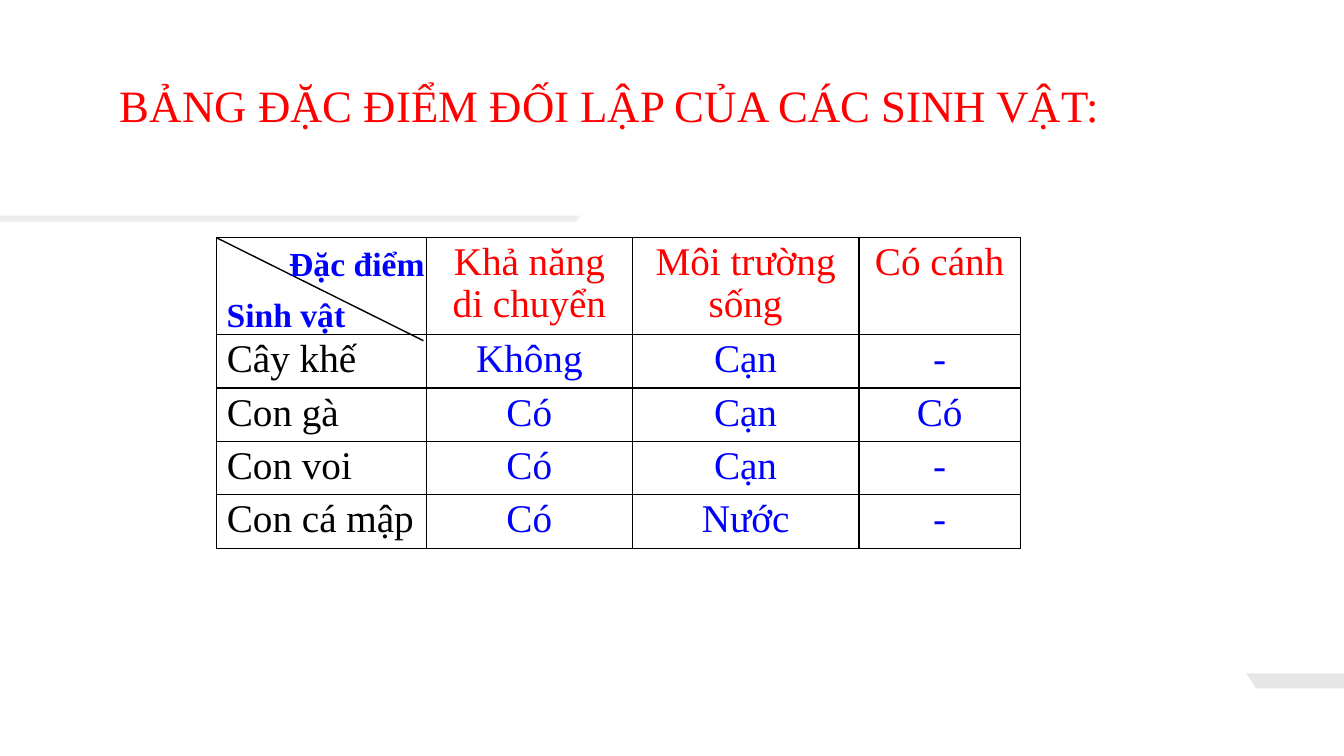
from dataclasses import dataclass

from lxml import etree
from pptx import Presentation
from pptx.dml.color import RGBColor
from pptx.enum.shapes import MSO_CONNECTOR
from pptx.enum.text import MSO_ANCHOR, MSO_AUTO_SIZE, PP_ALIGN
from pptx.oxml.ns import qn
from pptx.util import Inches, Pt

STRAIGHT = MSO_CONNECTOR.STRAIGHT
TOP = MSO_ANCHOR.TOP
NO_FIT = MSO_AUTO_SIZE.NONE
LEFT, CENTER, JUSTIFY = PP_ALIGN.LEFT, PP_ALIGN.CENTER, PP_ALIGN.JUSTIFY
TITLE_ONLY = 5


@dataclass(frozen=True)
class Theme:
    """Colours, font and type sizes of the slide."""
    font: str = "Times New Roman"
    red: str = "FF0000"
    blue: str = "0000FF"
    black: str = "000000"
    band: str = "E7E6E6"
    title_size: int = 32
    table_size: int = 28
    label_size: int = 24


THEME = Theme()
TITLE = "BẢNG ĐẶC ĐIỂM ĐỐI LẬP CỦA CÁC SINH VẬT:"
TRAITS = [
    ["", "Khả năng di chuyển", "Môi trường sống", "Có cánh"],
    ["Cây khế", "Không", "Cạn", "-"],
    ["Con gà", "Có", "Cạn", "Có"],
    ["Con voi", "Có", "Cạn", "-"],
    ["Con cá mập", "Có", "Nước", "-"],
]
COLUMN_WIDTHS = [2.08, 2.04, 2.25, 1.6]
HEADER_HEIGHT, ROW_HEIGHT = 0.96, 0.53


def style(paragraph, size, color, align=LEFT, bold=False):
    """Set the font and alignment of a paragraph."""
    font = paragraph.font
    font.name, font.size, font.bold = THEME.font, Pt(size), bold
    font.color.rgb = RGBColor.from_string(color)
    paragraph.alignment = align


def add_band(slide, points, opacity=100):
    """Draw a grey decorative band through the given points."""
    corners = [(Inches(x), Inches(y)) for x, y in points]
    builder = slide.shapes.build_freeform(*corners[0])
    builder.add_line_segments(corners[1:], close=True)
    band = builder.convert_to_shape()
    band.shadow.inherit = False
    band.line.fill.background()
    band.fill.solid()
    band.fill.fore_color.rgb = RGBColor.from_string(THEME.band)
    if opacity < 100:
        color = band.fill._xPr.find(qn("a:solidFill"))[0]
        etree.SubElement(color, qn("a:alpha")).set("val", str(opacity * 1000))


def add_title(slide, left, top, width, height):
    """Place the heading in the title placeholder."""
    title = slide.shapes.title
    title.left, title.top = Inches(left), Inches(top)
    title.width, title.height = Inches(width), Inches(height)
    frame = title.text_frame
    frame.text = TITLE
    frame.word_wrap = True
    frame.auto_size = NO_FIT
    frame.vertical_anchor = TOP
    heading = frame.paragraphs[0]
    style(heading, THEME.title_size, THEME.red, JUSTIFY)
    heading.space_before = Pt(3)
    heading.line_spacing = 1.0
    heading._p.get_or_add_pPr().set("marL", str(Inches(0.07)))


def add_borders(cell):
    """Give a cell thin black lines on all four sides."""
    properties = cell._tc.get_or_add_tcPr()
    for index, side in enumerate(("a:lnL", "a:lnR", "a:lnT", "a:lnB")):
        border = etree.Element(qn(side), w=str(Pt(1)))
        fill = etree.SubElement(border, qn("a:solidFill"))
        etree.SubElement(fill, qn("a:srgbClr")).set("val", THEME.black)
        properties.insert(index, border)


def add_traits_table(slide, left, top):
    """Build the table of contrasting traits."""
    height = HEADER_HEIGHT + ROW_HEIGHT * (len(TRAITS) - 1)
    table = slide.shapes.add_table(
        len(TRAITS), len(COLUMN_WIDTHS), Inches(left), Inches(top),
        Inches(sum(COLUMN_WIDTHS)), Inches(height)).table
    table.first_row = table.horz_banding = False
    for column, width in zip(table.columns, COLUMN_WIDTHS):
        column.width = Inches(width)
    for r, traits in enumerate(TRAITS):
        table.rows[r].height = Inches(ROW_HEIGHT if r else HEADER_HEIGHT)
        for c, trait in enumerate(traits):
            cell = table.cell(r, c)
            cell.text = trait
            cell.fill.background()
            add_borders(cell)
            color = THEME.red if r == 0 else THEME.blue if c else THEME.black
            paragraph = cell.text_frame.paragraphs[0]
            style(paragraph, THEME.table_size, color, CENTER if c else LEFT)
            paragraph.line_spacing = 0.95


def add_label(slide, text, left, top, width):
    """Add one bold label of the split header cell."""
    box = slide.shapes.add_textbox(
        Inches(left), Inches(top), Inches(width), Inches(0.5))
    box.text_frame.word_wrap = True
    box.text_frame.text = text
    style(box.text_frame.paragraphs[0], THEME.label_size, THEME.blue, bold=True)


def add_split_header(slide, left, top):
    """Split the corner cell with a diagonal and label both halves."""
    diagonal = slide.shapes.add_connector(
        STRAIGHT, Inches(left), Inches(top),
        Inches(left + 2.05), Inches(top + 1.02))
    diagonal.line.color.rgb = RGBColor.from_string(THEME.black)
    diagonal.line.width = Pt(1)
    etree.SubElement(diagonal._element.spPr, qn("a:effectLst"))
    add_label(slide, "Sinh vật", left, top + 0.51, 1.46)
    add_label(slide, "Đặc điểm", left + 0.62, top, 1.68)


def main():
    """Build and save the slide."""
    deck = Presentation()
    deck.slide_width, deck.slide_height = Inches(13.33), Inches(7.5)
    slide = deck.slides.add_slide(deck.slide_layouts[TITLE_ONLY])
    add_band(slide, [(13.33, 6.68), (13.33, 6.83), (12.46, 6.83), (12.36, 6.68)])
    add_band(slide, [(0, 2.14), (0, 2.2), (5.71, 2.2), (5.76, 2.14)], 70)
    add_title(slide, 1.02, 0.72, 10.08, 0.64)
    add_traits_table(slide, 2.15, 2.36)
    add_split_header(slide, 2.15, 2.36)
    deck.save("out.pptx")


if __name__ == "__main__":
    main()
